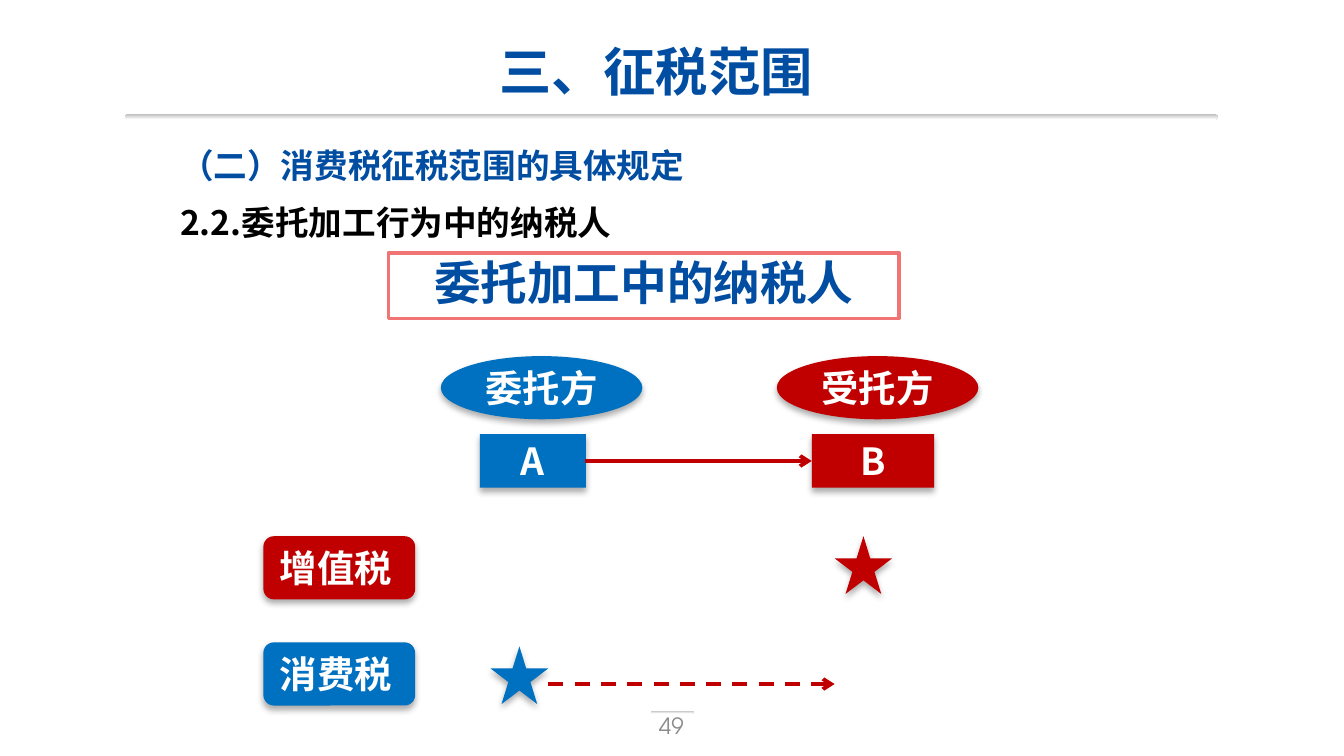
from lxml import etree
from pptx import Presentation, util as u
from pptx.dml.color import RGBColor
from pptx.enum import dml, shapes, text
from pptx.oxml import parse_xml
from pptx.oxml.ns import nsdecls, qn

NAVY = RGBColor(0x00, 0x4D, 0xA1)
BLUE = RGBColor(0x00, 0x70, 0xC0)
RED = RGBColor(0xC0, 0x00, 0x00)
PINK = RGBColor(0xF1, 0x74, 0x75)
GREY = RGBColor(0x8C, 0x8C, 0x8C)
SILVER = RGBColor(0xBF, 0xBF, 0xBF)
BLACK = RGBColor(0, 0, 0)
WHITE = RGBColor(0xFF, 0xFF, 0xFF)
CELL = u.Inches(0.1)  # the slide is a grid of 100 columns
KIND = shapes.MSO_SHAPE
CENTER = text.PP_ALIGN.CENTER
MIDDLE = text.MSO_ANCHOR.MIDDLE
SHADOW = f"""<a:effectLst {nsdecls('a')}>
  <a:outerShdw blurRad="44450" dist="27940" dir="5400000" algn="ctr" rotWithShape="0">
    <a:srgbClr val="000000"><a:alpha val="32000"/></a:srgbClr>
  </a:outerShdw></a:effectLst>"""


def write(para, words, size, color, align=None, bold=True, face="Noto Sans CJK SC"):
    para.text = words
    para.alignment = align
    font = para.font
    font.size, font.bold, font.name = u.Pt(size), bold, face
    font.color.rgb = color
    etree.SubElement(font._element, qn("a:ea"), typeface=face)


def draw(kind, cells, fill, shadow=True):
    """Add a borderless shape at (column, row, columns, rows)."""
    shape = page.shapes.add_shape(kind, *(int(c * CELL) for c in cells))
    shape.shadow.inherit = False
    shape.fill.solid()
    shape.fill.fore_color.rgb = fill
    shape.line.fill.background()
    if shadow:
        properties = shape._element.spPr
        properties.remove(properties.find(qn("a:effectLst")))
        properties.append(parse_xml(SHADOW))
    return shape


deck = Presentation()
deck.slide_width, deck.slide_height = 100 * CELL, int(56.25 * CELL)
page = deck.slides.add_slide(deck.slide_layouts[1])
title, body = page.placeholders
number = page.shapes.add_textbox(0, 0, CELL, CELL)

# Title, list and page number
for box, cells, anchor in (
    (title, (9, 2.5, 79.6, 5.5), text.MSO_ANCHOR.TOP),
    (body, (6.5, 9.1, 89.8, 44.9), text.MSO_ANCHOR.TOP),
    (number, (38.3, 52.5, 23.3, 3), MIDDLE),
):
    box.left, box.top, box.width, box.height = (int(c * CELL) for c in cells)
    frame = box.text_frame
    frame.word_wrap = True
    frame.auto_size = text.MSO_AUTO_SIZE.NONE
    frame.vertical_anchor = anchor
    if box is not body:
        frame.margin_left = frame.margin_right = u.Inches(0.07)
        frame.margin_top = frame.margin_bottom = u.Inches(0.04)

write(title.text_frame.paragraphs[0], "三、征税范围", 28, NAVY, CENTER)
write(number.text_frame.paragraphs[0], "49", 12, GREY, CENTER, False, "TeX Gyre Adventor")

body.text_frame.add_paragraph()
lines = (("（二）消费税征税范围的具体规定", NAVY), ("2.2.委托加工行为中的纳税人", BLACK))
for para, (words, color) in zip(body.text_frame.paragraphs, lines):
    layout = para._p.get_or_add_pPr()
    layout.set("marL", "0")
    layout.set("indent", str(u.Inches(0.59)))
    etree.SubElement(layout, qn("a:buNone"))
    para.line_spacing = 1.4
    para.space_before = u.Pt(0)
    write(para, words, 18, color)

# Rules under the title and above the page number
for cells in ((9.3, 8.5, 81.3, 0.4), (48.4, 52.9, 3.2, 0.2)):
    rule = draw(KIND.ROUNDED_RECTANGLE, cells, SILVER, shadow=False)
    rule.adjustments[0] = 0.5
    rule.fill.gradient()
    rule.fill.gradient_angle = 270
    for stop, color, position in zip(rule.fill.gradient_stops, (SILVER, WHITE), (0, 1)):
        stop.color.rgb = color
        stop.position = position

# Framed heading
heading = draw(KIND.RECTANGLE, (28.9, 18.8, 38, 4.9), WHITE, shadow=False)
heading.line.color.rgb = PINK
heading.line.width = u.Pt(2)
heading.text_frame.vertical_anchor = MIDDLE
para = heading.text_frame.paragraphs[0]
para.line_spacing = 0.9
write(para, "委托加工中的纳税人", 25, NAVY, CENTER)

# Parties and taxes
for kind, cells, fill, words in (
    (KIND.RECTANGLE, (35.7, 32.3, 7.9, 4), BLUE, "A"),
    (KIND.RECTANGLE, (60.4, 32.3, 9.1, 4), RED, "B"),
    (KIND.OVAL, (32.8, 26.5, 15, 4.7), BLUE, "委托方"),
    (KIND.OVAL, (57.8, 26.5, 15, 4.7), RED, "受托方"),
    (KIND.ROUNDED_RECTANGLE, (19.6, 39.9, 11.3, 4.7), RED, "增值税"),
    (KIND.ROUNDED_RECTANGLE, (19.6, 47.8, 11.3, 4.7), BLUE, "消费税"),
    (KIND.STAR_5_POINT, (62.1, 39.9, 4.3, 4.3), RED, ""),
    (KIND.STAR_5_POINT, (36.5, 48.1, 4.3, 4.3), BLUE, ""),
):
    shape = draw(kind, cells, fill)
    if words:
        is_tax = kind == KIND.ROUNDED_RECTANGLE
        shape.text_frame.word_wrap = not is_tax
        shape.text_frame.vertical_anchor = MIDDLE
        align = text.PP_ALIGN.LEFT if is_tax else CENTER
        write(shape.text_frame.paragraphs[0], words, 20, WHITE, align)

# Arrows from the consignor to the consignee
for start, end, row, dash in (
    (43.5, 60.4, 34.3, None),
    (40.8, 62.1, 50.9, dml.MSO_LINE.DASH),
):
    arrow = page.shapes.add_connector(
        shapes.MSO_CONNECTOR.STRAIGHT, *(int(c * CELL) for c in (start, row, end, row)))
    arrow.line.color.rgb = RED
    arrow.line.width = u.Pt(2)
    arrow.line.dash_style = dash
    etree.SubElement(arrow.line._get_or_add_ln(), qn("a:tailEnd"), type="arrow")
    etree.SubElement(arrow._element.spPr, qn("a:effectLst"))

deck.save("out.pptx")
